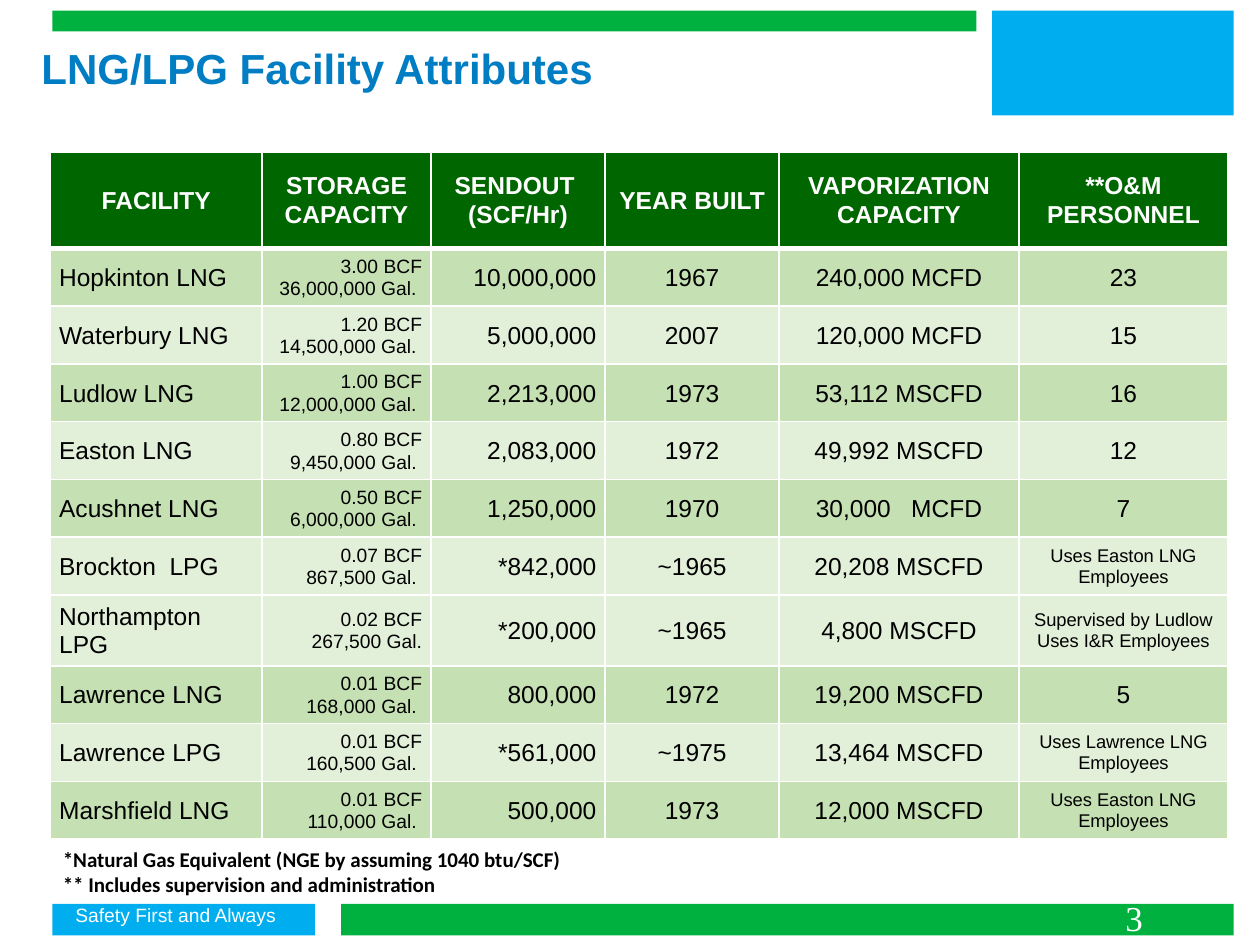
from lxml import etree
from pptx import Presentation
from pptx.dml.color import RGBColor
from pptx.enum import shapes, text
from pptx.oxml import ns
from pptx.util import Pt

GREEN = RGBColor(0x00, 0xB1, 0x40)
SKY = RGBColor(0x00, 0xAE, 0xEF)
BLUE = RGBColor(0x00, 0x7D, 0xC3)
DARK_GREEN = RGBColor(0x00, 0x66, 0x00)
MID_GREEN = RGBColor(0xC5, 0xE0, 0xB3)
PALE_GREEN = RGBColor(0xE2, 0xEF, 0xD9)
WHITE = RGBColor(0xFF, 0xFF, 0xFF)
BLACK = RGBColor(0x00, 0x00, 0x00)
LEFT, CENTER, RIGHT = (text.PP_ALIGN.LEFT, text.PP_ALIGN.CENTER,
                       text.PP_ALIGN.RIGHT)

# Content
TITLE = "LNG/LPG Facility Attributes"
FOOTNOTES = ["*Natural Gas Equivalent (NGE by assuming 1040 btu/SCF)",
             "** Includes supervision and administration"]
MOTTO = "Safety First and Always"
PAGE = "3"
HEADER = ["FACILITY", "STORAGE CAPACITY", "SENDOUT  (SCF/Hr)", "YEAR BUILT",
          "VAPORIZATION CAPACITY", "**O&M PERSONNEL"]
FACILITIES = [
    ("Hopkinton LNG", "3.00 BCF\n36,000,000 Gal. ", "10,000,000", "1967",
     "240,000 MCFD", "23"),
    ("Waterbury LNG", "1.20 BCF\n14,500,000 Gal. ", "5,000,000", "2007",
     "120,000 MCFD", "15"),
    ("Ludlow LNG", "1.00 BCF\n12,000,000 Gal. ", "2,213,000", "1973",
     "53,112 MSCFD", "16"),
    ("Easton LNG", "0.80 BCF\n9,450,000 Gal. ", "2,083,000", "1972",
     "49,992 MSCFD", "12"),
    ("Acushnet LNG", "0.50 BCF\n6,000,000 Gal. ", "1,250,000", "1970",
     "30,000   MCFD", "7"),
    ("Brockton  LPG", "0.07 BCF\n867,500 Gal. ", "*842,000", "~1965",
     "20,208 MSCFD", "Uses Easton LNG Employees"),
    ("Northampton LPG", "0.02 BCF\n267,500 Gal.", "*200,000", "~1965",
     "4,800 MSCFD", "Supervised by Ludlow\nUses I&R Employees"),
    ("Lawrence LNG", "0.01 BCF\n168,000 Gal. ", "800,000", "1972",
     "19,200 MSCFD", "5"),
    ("Lawrence LPG", "0.01 BCF\n160,500 Gal. ", "*561,000", "~1975",
     "13,464 MSCFD", "Uses Lawrence LNG Employees"),
    ("Marshfield LNG", "0.01 BCF\n110,000 Gal. ", "500,000", "1973",
     "12,000 MSCFD", "Uses Easton LNG Employees"),
]
PALE_ROWS = {2, 4, 6, 7, 9}

# Layout: left, top, width, height in points
BARS = [(GREEN, (30, 6, 528, 12)), (GREEN, (195, 516.5, 510, 18)),
        (SKY, (30, 516.5, 150, 18)), (SKY, (567, 6, 138, 60))]
TITLE_BOX = (16.5, 6, 612, 65)
MOTTO_BOX = (36, 512.5, 144, 21)
PAGE_BOX = (636, 508.5, 57.5, 31.5)
NOTE_BOX = (28.8, 480.3, 649.5, 37)
TABLE_BOX = (28.8, 86.8, 673, 391)
COLUMN_WIDTHS = [121, 96.5, 99.5, 99.5, 137, 119.5]
COLUMN_ALIGNS = [LEFT, RIGHT, RIGHT, CENTER, CENTER, CENTER]
HEADER_HEIGHT, ROW_HEIGHT, TALL_HEIGHT = 55.2, 33, 40.5
STORAGE, VAPORIZATION, PERSONNEL = 1, 4, 5


def points(box):
    return [Pt(value) for value in box]


def set_attributes(target, **values):
    for name, value in values.items():
        setattr(target, name, value)


def write(frame, lines, size, color, font="Arial", bold=False, align=LEFT,
          spacing=1.0):
    frame.text = "\n".join(lines)
    frame.word_wrap = True
    for paragraph in frame.paragraphs:
        set_attributes(paragraph, alignment=align, line_spacing=spacing)
        set_attributes(paragraph.font, name=font, size=Pt(size), bold=bold)
        paragraph.font.color.rgb = color


def add_label(slide, box, lines, size, color, **style):
    frame = slide.shapes.add_textbox(*points(box)).text_frame
    write(frame, lines, size, color, **style)


def add_borders(cell, widths):
    properties = cell._tc.get_or_add_tcPr()
    for side, width in widths.items():
        line = etree.SubElement(properties, ns.qn("a:ln" + side),
                                w=str(Pt(width)))
        fill = etree.SubElement(line, ns.qn("a:solidFill"))
        etree.SubElement(fill, ns.qn("a:srgbClr"), val=str(WHITE))


def text_size(column, value):
    if column == STORAGE:
        return 11
    if column == PERSONNEL and not value.isdigit():
        return 10.5
    return 14


def format_cell(cell, row, column, value):
    is_header = row == 0
    add_borders(cell, {"L": 1, "R": 1, "T": 3 if row == 1 else 1,
                       "B": 3 if is_header else 1})
    cell.fill.solid()
    cell.fill.fore_color.rgb = (DARK_GREEN if is_header else
                                PALE_GREEN if row in PALE_ROWS else MID_GREEN)
    side, edge = (0.5, 0.5) if column == VAPORIZATION else (5, 2.9)
    set_attributes(cell, vertical_anchor=text.MSO_ANCHOR.MIDDLE,
                   margin_left=Pt(side), margin_right=Pt(side),
                   margin_top=Pt(edge), margin_bottom=Pt(edge))
    write(cell.text_frame, value.split("\n"),
          14 if is_header else text_size(column, value),
          WHITE if is_header else BLACK, bold=is_header,
          align=CENTER if is_header else COLUMN_ALIGNS[column], spacing=1.05)


def add_facility_table(slide):
    rows = [HEADER, *FACILITIES]
    table = slide.shapes.add_table(len(rows), len(HEADER),
                                   *points(TABLE_BOX)).table
    table.horz_banding = False
    for column, width in zip(table.columns, COLUMN_WIDTHS):
        column.width = Pt(width)
    for row, values in enumerate(rows):
        height = (HEADER_HEIGHT if row == 0 else
                  TALL_HEIGHT if values[0] == "Northampton LPG" else ROW_HEIGHT)
        table.rows[row].height = Pt(height)
        for column, value in enumerate(values):
            format_cell(table.cell(row, column), row, column, value)


def main():
    presentation = Presentation()
    set_attributes(presentation, slide_width=Pt(720), slide_height=Pt(540))
    slide = presentation.slides.add_slide(presentation.slide_layouts[5])

    # Colour bars
    for color, box in BARS:
        bar = slide.shapes.add_shape(shapes.MSO_SHAPE.RECTANGLE, *points(box))
        bar.shadow.inherit = False
        bar.fill.solid()
        bar.fill.fore_color.rgb = color
        bar.line.fill.background()

    # Title
    title = slide.shapes.title
    set_attributes(title, **dict(zip(("left", "top", "width", "height"),
                                     points(TITLE_BOX))))
    title.text_frame.vertical_anchor = text.MSO_ANCHOR.MIDDLE
    write(title.text_frame, [TITLE], 24, BLUE, bold=True)

    # Table, footnotes and footer
    add_facility_table(slide)
    add_label(slide, NOTE_BOX, FOOTNOTES, 12, BLACK, font="Calibri", bold=True)
    add_label(slide, MOTTO_BOX, [MOTTO], 11, WHITE)
    add_label(slide, PAGE_BOX, [PAGE], 20, WHITE, font="Times New Roman")

    presentation.save("out.pptx")


if __name__ == "__main__":
    main()
